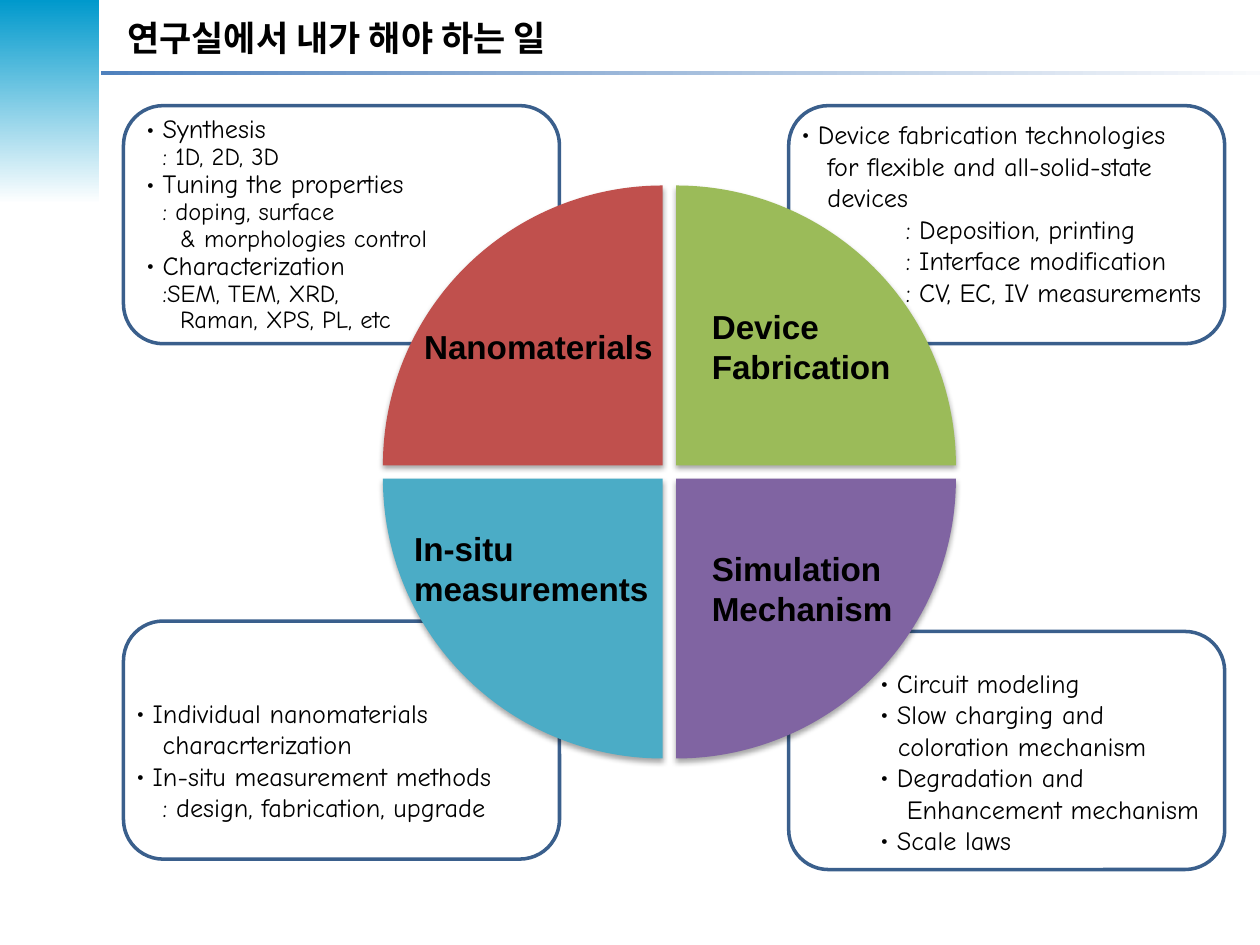
from dataclasses import dataclass

from lxml.etree import SubElement
from pptx import Presentation
from pptx.dml.color import RGBColor
from pptx.enum.shapes import MSO_SHAPE
from pptx.enum.text import MSO_ANCHOR, MSO_AUTO_SIZE, PP_ALIGN
from pptx.oxml.ns import qn
from pptx.util import Cm, Pt


@dataclass(frozen=True)
class Theme:
    """Colours, fonts and type sizes of the slide."""
    ink: str = "000000"
    band: tuple = ("0099CC", "FFFFFF")
    rule: tuple = ("4F81BD", "F9FAFC")
    outline: str = "3A5F8C"
    wedges: tuple = ("C0504D", "9BBB59", "8064A2", "4BACC6")
    title_font: str = "Noto Sans CJK KR"
    label_font: str = "Arial"
    note_font: str = "Comic Neue"
    title_size: int = 20
    label_size: int = 19
    note_size: int = 15
    small_size: int = 14


def write(p, text, font, size, color, bold=False):
    """Add a formatted run to a paragraph."""
    r = p.add_run()
    r.text = text
    r.font.name, r.font.size, r.font.bold = font, Pt(size), bold
    r.font.color.rgb = RGBColor.from_string(color)
    SubElement(r.font._element, qn("a:ea"), typeface=font)


def indent(p, left, bullet):
    """Set the left margin, with a hanging bullet if asked for."""
    pPr = p._p.get_or_add_pPr()
    pPr.set("marL", str(Cm(left)))
    pPr.set("indent", str(-Cm(left) if bullet else 0))
    if bullet:
        SubElement(pPr, qn("a:buFont"), typeface=Theme.note_font)
        SubElement(pPr, qn("a:buChar"), char="•")


class Deck:
    """Holds the theme and the current slide."""

    def __init__(self, prs, theme):
        """Start a title-only slide."""
        self.t = theme
        self.s = prs.slides.add_slide(prs.slide_layouts[5])

    def title(self, text, x, y, w, h):
        """Place and format the title placeholder."""
        sp = self.s.shapes.title
        sp.left, sp.top, sp.width, sp.height = map(Cm, (x, y, w, h))
        tf = sp.text_frame
        tf.auto_size, tf.word_wrap = MSO_AUTO_SIZE.NONE, True
        tf.vertical_anchor = MSO_ANCHOR.MIDDLE
        p = tf.paragraphs[0]
        p.alignment = PP_ALIGN.LEFT
        write(p, text, self.t.title_font, self.t.title_size, self.t.ink, bold=True)

    def shape(self, kind, x, y, w, h):
        """Add a plain preset shape."""
        sp = self.s.shapes.add_shape(kind, Cm(x), Cm(y), Cm(w), Cm(h))
        sp.shadow.inherit = False
        sp.line.fill.background()
        return sp

    def gradient(self, colors, angle, x, y, w, h):
        """Add a rectangle with a two-colour gradient."""
        fill = self.shape(MSO_SHAPE.RECTANGLE, x, y, w, h).fill
        fill.gradient()
        fill.gradient_angle = angle
        for stop, position, color in zip(fill.gradient_stops, (0, 1), colors):
            stop.position = position
            stop.color.rgb = RGBColor.from_string(color)

    def card(self, x, y):
        """Add an outlined rounded card."""
        sp = self.shape(MSO_SHAPE.ROUNDED_RECTANGLE, x, y, 8.79, 4.8)
        sp.fill.background()
        sp.line.color.rgb = RGBColor.from_string(self.t.outline)
        sp.line.width = Pt(2)

    def wedge(self, color, rotation, x, y, size):
        """Add a quarter circle with a soft shadow below."""
        sp = self.shape(MSO_SHAPE.PIE_WEDGE, x, y, size, size)
        sp.rotation = rotation
        sp.fill.solid()
        sp.fill.fore_color.rgb = RGBColor.from_string(color)
        effects = sp._element.spPr.find(qn("a:effectLst"))
        shadow = SubElement(effects, qn("a:outerShdw"), blurRad=str(Pt(3.1)),
                            dist=str(Pt(1.8)), dir="5400000", rotWithShape="0")
        clr = SubElement(shadow, qn("a:srgbClr"), val="000000")
        SubElement(clr, qn("a:alpha"), val="35000")

    def box(self, x, y, w, h, count):
        """Add a text box and return its paragraphs."""
        tf = self.s.shapes.add_textbox(Cm(x), Cm(y), Cm(w), Cm(h)).text_frame
        tf.word_wrap = True
        return [tf.paragraphs[0]] + [tf.add_paragraph() for _ in range(count - 1)]

    def label(self, lines, *at):
        """Add a bold wedge label."""
        for p, text in zip(self.box(*at, len(lines)), lines):
            write(p, text, self.t.label_font, self.t.label_size, self.t.ink, bold=True)

    def notes(self, lines, *at, sub_size, spacing=1.0):
        """Add notes, where a line without an indent is a bullet."""
        for p, (left, text) in zip(self.box(*at, len(lines)), lines):
            p.line_spacing = spacing
            indent(p, left or 0.33, not left)
            size = sub_size if left else self.t.note_size
            write(p, text, self.t.note_font, size, self.t.ink)


def main():
    """Build the slide and save it."""
    prs = Presentation()
    prs.slide_width, prs.slide_height = Cm(25.4), Cm(19.05)
    t = Theme()
    d = Deck(prs, t)

    d.gradient(t.band, 270, 0, 0, 2, 4.11)
    d.gradient(t.rule, 0, 2.03, 1.43, 23.37, 0.08)
    d.title("연구실에서 내가 해야 하는 일", 2.31, 0.2, 9.83, 1.12)

    for x, y in ((2.49, 2.13), (15.9, 2.13), (15.9, 12.73), (2.49, 12.52)):
        d.card(x, y)

    x, y, size, step = 7.72, 3.74, 5.64, 5.91
    for i, (col, row) in enumerate(((0, 0), (1, 0), (1, 1), (0, 1))):
        d.wedge(t.wedges[i], 90 * i, x + col * step, y + row * step, size)

    d.label(["Nanomaterials"], 8.3, 6.45, 5.3, 1.07)
    d.label(["Device", "Fabrication"], 14.1, 6.05, 4.3, 1.88)
    d.label(["Simulation", "Mechanism"], 14.1, 10.93, 4.3, 1.88)
    d.label(["In-situ", "measurements"], 8.1, 10.52, 5.4, 1.88)

    d.notes([(0, "Synthesis"),
             (0.33, ": 1D, 2D, 3D"),
             (0, "Tuning the properties"),
             (0.33, ": doping, surface"),
             (0.68, "& morphologies control"),
             (0, "Characterization"),
             (0.33, ":SEM, TEM, XRD,"),
             (0.68, "Raman, XPS, PL, etc")],
            2.7, 2.22, 6.6, 5.31, sub_size=t.small_size, spacing=0.9)
    d.notes([(0, "Device fabrication technologies"),
             (0.52, "for flexible and all-solid-state"),
             (0.52, "devices"),
             (2.1, ": Deposition, printing"),
             (2.1, ": Interface modification"),
             (2.1, ": CV, EC, IV measurements")],
            15.91, 2.26, 9.1, 4.11, sub_size=t.note_size)
    d.notes([(0, "Circuit modeling"),
             (0, "Slow charging and"),
             (0.35, "coloration mechanism"),
             (0, "Degradation and"),
             (0.53, "Enhancement mechanism"),
             (0, "Scale laws")],
            17.5, 13.32, 7.2, 4.11, sub_size=t.note_size)
    d.notes([(0, "Individual nanomaterials"),
             (0.53, "characrterization"),
             (0, "In-situ measurement methods"),
             (0.53, ": design, fabrication, upgrade")],
            2.5, 13.93, 8.41, 2.82, sub_size=t.note_size)

    prs.save("out.pptx")


if __name__ == "__main__":
    main()
